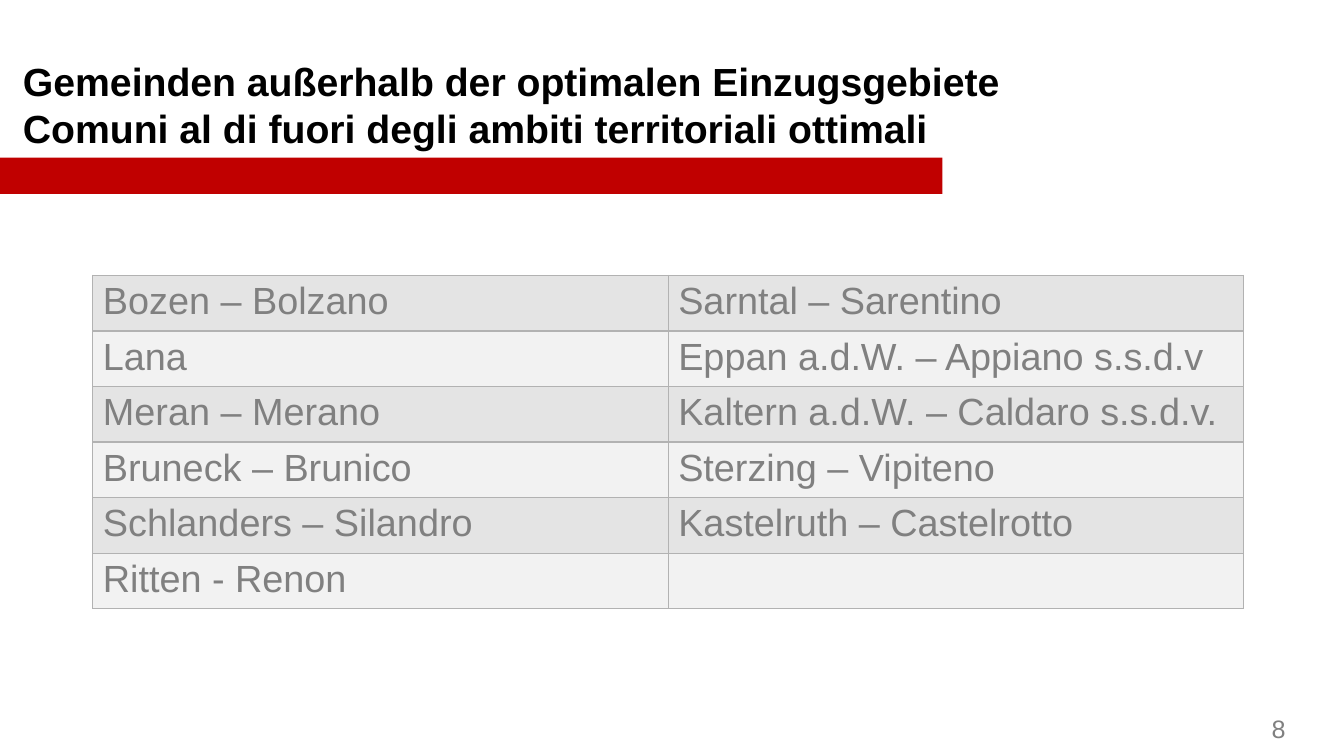
from lxml.etree import SubElement
from pptx import Presentation
from pptx.dml.color import RGBColor
from pptx.enum.shapes import MSO_SHAPE
from pptx.enum.text import MSO_ANCHOR
from pptx.oxml.ns import qn
from pptx.util import Cm, Pt

COLORS = {
    "title": "000000",
    "bar": "C00000",
    "text": "808080",
    "border": "B2B2B2",
    "odd": "E4E4E4",
    "even": "F2F2F2",
}
FONT = "Arial"
TITLE = [
    "Gemeinden außerhalb der optimalen Einzugsgebiete",
    "Comuni al di fuori degli ambiti territoriali ottimali",
]
MUNICIPALITIES = [
    ("Bozen – Bolzano", "Sarntal – Sarentino"),
    ("Lana", "Eppan a.d.W. – Appiano s.s.d.v"),
    ("Meran – Merano", "Kaltern a.d.W. – Caldaro s.s.d.v."),
    ("Bruneck – Brunico", "Sterzing – Vipiteno"),
    ("Schlanders – Silandro", "Kastelruth – Castelrotto"),
    ("Ritten - Renon", ""),
]


def rgb(name):
    return RGBColor.from_string(COLORS[name])


def style(p, size, color, bold=False):
    p.font.name = FONT
    p.font.size = Pt(size)
    p.font.bold = bold
    p.font.color.rgb = rgb(color)


def add_text(s, lines, left, top, width, height, size, color, bold=False):
    tf = s.shapes.add_textbox(Cm(left), Cm(top), Cm(width), Cm(height)).text_frame
    tf.word_wrap = True
    tf.text = "\n".join(lines)
    for p in tf.paragraphs:
        style(p, size, color, bold)


def add_header(s, left, top, width, height):
    add_text(s, TITLE, left, top, width, height, 28, "title", True)
    bar = s.shapes.add_shape(
        MSO_SHAPE.RECTANGLE, Cm(left - 1.2), Cm(top + height), Cm(24.62), Cm(0.92)
    )
    bar.shadow.inherit = False
    bar.fill.solid()
    bar.fill.fore_color.rgb = rgb("bar")
    bar.line.fill.background()


def add_borders(cell):
    tcPr = cell._tc.get_or_add_tcPr()
    for i, side in enumerate(("lnL", "lnR", "lnT", "lnB")):
        ln = SubElement(tcPr, qn(f"a:{side}"), w=str(Pt(1)))
        tcPr.insert(i, ln)
        fill = SubElement(ln, qn("a:solidFill"))
        SubElement(fill, qn("a:srgbClr"), val=COLORS["border"])


def add_municipalities(s, left, top, width, height):
    rows, cols = len(MUNICIPALITIES), len(MUNICIPALITIES[0])
    table = s.shapes.add_table(
        rows, cols, Cm(left), Cm(top), Cm(width), Cm(height)
    ).table
    table.first_row = False
    table.horz_banding = False
    for r, names in enumerate(MUNICIPALITIES):
        for c, name in enumerate(names):
            cell = table.cell(r, c)
            cell.text = name
            cell.vertical_anchor = MSO_ANCHOR.TOP
            cell.fill.solid()
            cell.fill.fore_color.rgb = rgb("even" if r % 2 else "odd")
            style(cell.text_frame.paragraphs[0], 27, "text")
            add_borders(cell)


def main():
    prs = Presentation()
    prs.slide_width, prs.slide_height = Cm(33.87), Cm(19.05)
    s = prs.slides.add_slide(prs.slide_layouts[6])
    add_header(s, 0.33, 1.32, 26.6, 2.65)
    add_municipalities(s, 2.34, 6.94, 29, 8.4)
    add_text(s, ["8"], 31.8, 17.86, 2.54, 1.02, 18, "text")
    prs.save("out.pptx")


if __name__ == "__main__":
    main()
